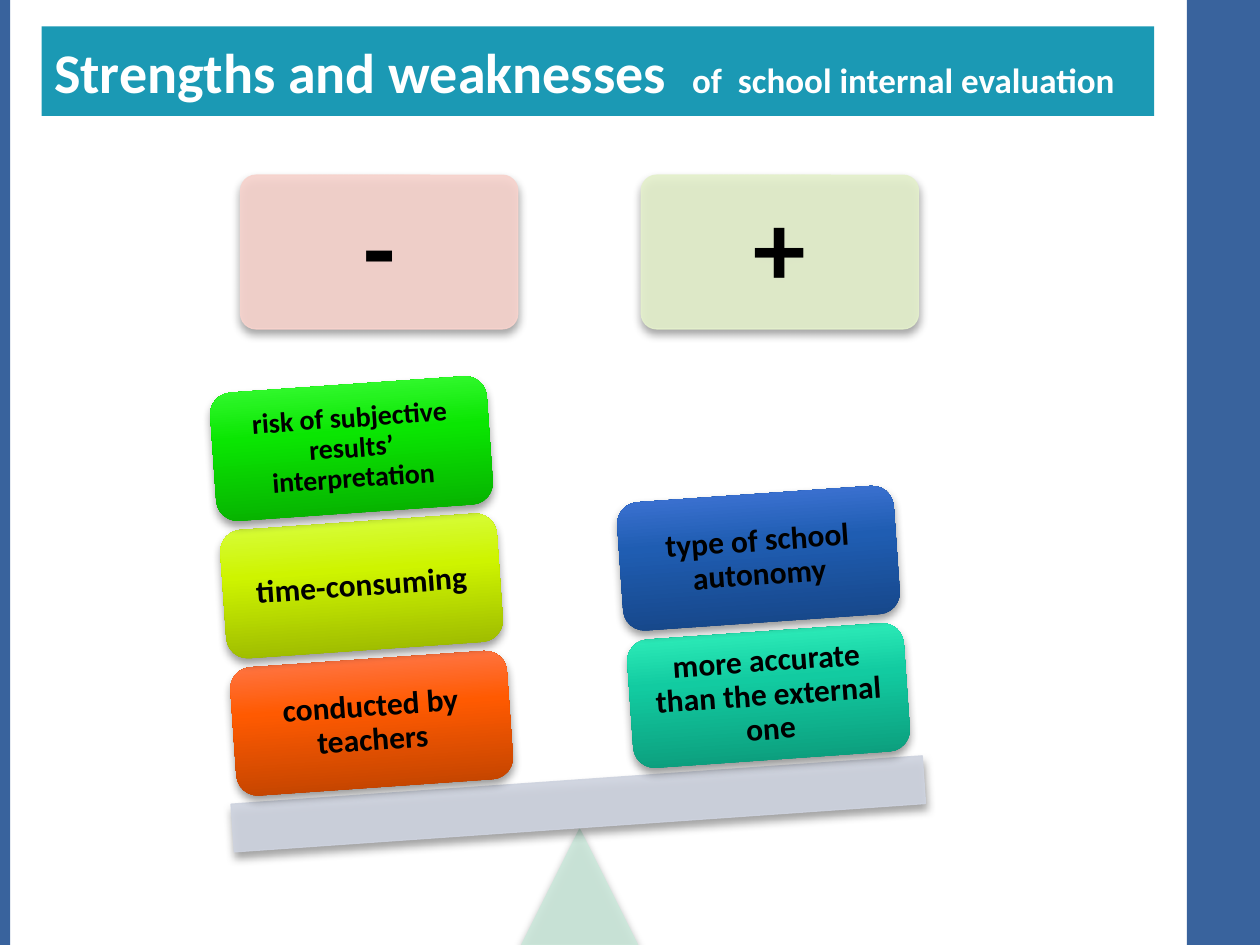
"""Build a slide that weighs strengths and weaknesses of school internal evaluation."""
from lxml.etree import SubElement
from pptx import Presentation
from pptx.dml.color import RGBColor
from pptx.enum.shapes import MSO_SHAPE
from pptx.enum.text import MSO_ANCHOR, MSO_AUTO_SIZE, PP_ALIGN
from pptx.oxml.ns import qn
from pptx.util import Inches, Pt

WHITE = RGBColor(0xFF, 0xFF, 0xFF)
BLACK = RGBColor(0x00, 0x00, 0x00)
NAVY = RGBColor(0x39, 0x63, 0x9D)
TEAL = RGBColor(0x1B, 0x99, 0xB4)
PINK = RGBColor(0xF7, 0xD3, 0xCD)
LIME = RGBColor(0xE4, 0xF0, 0xCC)
MINT = RGBColor(0xCC, 0xE8, 0xDB)
GREY = RGBColor(0xCE, 0xD3, 0xDF)
ORANGES = RGBColor(0xB9, 0x41, 0x00), RGBColor(0xFF, 0x5A, 0x01), RGBColor(0xFF, 0x7D, 0x59)
YELLOWS = RGBColor(0x95, 0xB1, 0x00), RGBColor(0xCE, 0xF4, 0x00), RGBColor(0xD9, 0xFF, 0x4C)
GREENS = RGBColor(0x06, 0xA8, 0x00), RGBColor(0x0A, 0xE6, 0x02), RGBColor(0x3F, 0xFF, 0x3C)
AQUAS = RGBColor(0x0B, 0x95, 0x76), RGBColor(0x12, 0xCB, 0xA1), RGBColor(0x36, 0xF7, 0xC0)
BLUES = RGBColor(0x15, 0x43, 0x82), RGBColor(0x1F, 0x5D, 0xB2), RGBColor(0x45, 0x78, 0xDB)
TILT = -4
BLOCK_WIDTH, BLOCK_HEIGHT = 22, 10.2
STEP_LEFT, STEP_UP = 0.8, 10.9

deck = Presentation()
deck.slide_width, deck.slide_height = Inches(10), Inches(7.5)
COLUMN, ROW = deck.slide_width / 100, deck.slide_height / 75
page = deck.slides.add_slide(deck.slide_layouts[5])


def write(para, text, *, size, color=BLACK):
    span = para.add_run()
    span.text = text
    span.font.name = "Calibri"
    span.font.size = Pt(size)
    span.font.bold = True
    span.font.color.rgb = color


def add_piece(kind, left, top, width, height, colors, *, text="", size=18, inset=0.07, tilt=0):
    shape = page.shapes.add_shape(kind, int(left * COLUMN), int(top * ROW),
                                  int(width * COLUMN), int(height * ROW))
    shape.rotation = tilt
    properties = shape.fill._xPr
    if len(colors) == 1:
        for paint in (shape.fill, shape.line.fill):
            paint.solid()
            paint.fore_color.rgb = colors[0]
        shape.line.width = Pt(0.75)
        for tint in list(properties.iter(qn("a:srgbClr"))):
            SubElement(tint, qn("a:alpha"), val="90000")
    else:
        shape.fill.gradient()
        shape.fill.gradient_angle = 90
        gradient = properties.find(qn("a:gradFill"))
        gradient.find(qn("a:lin")).set("ang", "16200000")
        stops = gradient.find(qn("a:gsLst"))
        for stop in list(stops):
            stops.remove(stop)
        for share, color in zip((0, 60, 100), colors):
            stop = SubElement(stops, qn("a:gs"), pos=str(share * 1000))
            SubElement(stop, qn("a:srgbClr"), val=str(color))
        shape.line.fill.background()
    shape.shadow.inherit = False
    shadow = SubElement(properties.find(qn("a:effectLst")), qn("a:outerShdw"),
                        blurRad=str(Pt(5.2)), dist=str(Pt(3)), dir="5400000", rotWithShape="0")
    shade = SubElement(shadow, qn("a:srgbClr"), val=str(BLACK))
    SubElement(shade, qn("a:alpha"), val="40000")
    if text:
        frame = shape.text_frame
        frame.word_wrap = True
        frame.vertical_anchor = MSO_ANCHOR.MIDDLE
        frame.margin_left = frame.margin_right = Inches(inset)
        frame.margin_top = frame.margin_bottom = Inches(inset)
        para = frame.paragraphs[0]
        para.alignment = PP_ALIGN.CENTER
        para.line_spacing = 0.9
        write(para, text, size=size)
    return shape


for left, width in ((94.2, 5.8), (0, 0.8)):
    bar = page.shapes.add_shape(MSO_SHAPE.RECTANGLE, int(left * COLUMN), 0,
                                int(width * COLUMN), deck.slide_height)
    bar.fill.solid()
    bar.fill.fore_color.rgb = NAVY
    bar.line.fill.background()
    bar.shadow.inherit = False

title = page.shapes.title
title.left, title.top = int(3.3 * COLUMN), int(2.1 * ROW)
title.width, title.height = int(88.3 * COLUMN), int(7.1 * ROW)
title.fill.solid()
title.fill.fore_color.rgb = TEAL
title.text_frame.auto_size = MSO_AUTO_SIZE.NONE
title.text_frame.word_wrap = True
title.text_frame.vertical_anchor = MSO_ANCHOR.MIDDLE
heading = title.text_frame.paragraphs[0]
heading.alignment = PP_ALIGN.LEFT
write(heading, "Strengths and weaknesses  ", size=32, color=WHITE)
write(heading, "of  school internal evaluation", size=20, color=WHITE)

for left, sign, color in ((19.1, "-", PINK), (50.9, "+", LIME)):
    card = add_piece(MSO_SHAPE.ROUNDED_RECTANGLE, left, 13.9, BLOCK_WIDTH, 12.2, [color],
                     text=sign, size=60, inset=0.25)
    card.adjustments[0] = 0.1

add_piece(MSO_SHAPE.ISOSCELES_TRIANGLE, 41.4, 65.8, 9.2, 9.2, [MINT])
add_piece(MSO_SHAPE.RECTANGLE, 18.4, 61.9, 55, 3.8, [GREY], tilt=TILT)

stacks = [
    (18.5, 52.3, [("conducted by teachers", 18, ORANGES),
                  ("time-consuming", 18, YELLOWS),
                  ("risk of subjective results’ interpretation", 16, GREENS)]),
    (50, 50.1, [("more accurate than the external one", 18, AQUAS),
                ("type of school autonomy", 18, BLUES)]),
]
for left, top, blocks in stacks:
    for level, (text, size, colors) in enumerate(blocks):
        add_piece(MSO_SHAPE.ROUNDED_RECTANGLE, left - level * STEP_LEFT, top - level * STEP_UP,
                  BLOCK_WIDTH, BLOCK_HEIGHT, colors, text=text, size=size, tilt=TILT)

deck.save("out.pptx")
